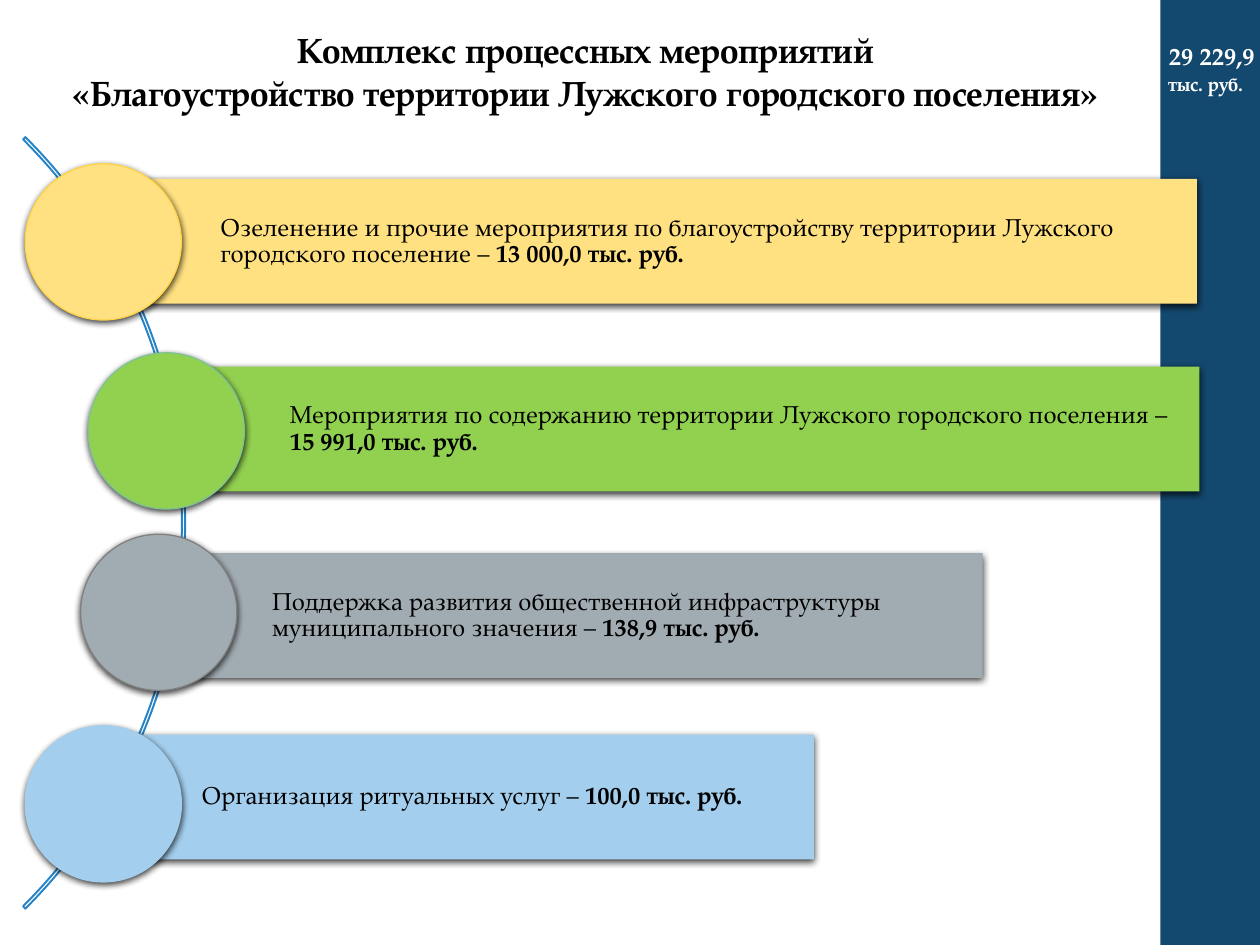
from lxml import etree
from pptx import Presentation
from pptx.dml.color import RGBColor
from pptx.enum.shapes import MSO_SHAPE as Shape
from pptx.enum.text import MSO_ANCHOR as Anchor, PP_ALIGN as Align
from pptx.oxml.ns import qn
from pptx.util import Inches, Pt

FONT = "TeX Gyre Pagella"
BLACK = RGBColor(0x00, 0x00, 0x00)
WHITE = RGBColor(0xFF, 0xFF, 0xFF)
NAVY = RGBColor(0x14, 0x49, 0x6F)
ARC_BLUE = RGBColor(0x26, 0x83, 0xC6)
YELLOW = RGBColor(0xFF, 0xE1, 0x81)
GOLD = RGBColor(0xFF, 0xD4, 0x4B)
GREEN = RGBColor(0x92, 0xD0, 0x50)
TEAL = RGBColor(0x7E, 0xC4, 0x92)
SILVER = RGBColor(0xA1, 0xAC, 0xB2)
GRAY = RGBColor(0x80, 0x80, 0x80)
SKY = RGBColor(0xA3, 0xCE, 0xED)

WIDTH, HEIGHT = 10, 7.5
SIDEBAR_LEFT = 9.21
BAR_HEIGHT = 0.99
CIRCLE_SIZE = 1.24
ARC_SIZE = 8.66

TITLE = ["Комплекс процессных мероприятий",
         "«Благоустройство территории Лужского городского поселения»"]
TOTAL = [[(" 29 229,9", 14)], [(" ", 12), ("тыс. руб.", 11)]]
# name, amount, fill, circle line, bar (left, top, width), circle (left, top)
MEASURES = [
    ("Озеленение и прочие мероприятия по благоустройству территории Лужского "
     "городского поселение – ", "13 000,0 тыс. руб.",
     YELLOW, GOLD, (0.96, 1.42, 8.54), (0.2, 1.3)),
    ("Мероприятия по содержанию территории Лужского городского поселения – ",
     "15 991,0 тыс. руб.", GREEN, TEAL, (1.51, 2.91, 8.01), (0.7, 2.8)),
    ("Поддержка развития общественной инфраструктуры муниципального значения – ",
     "138,9 тыс. руб.", SILVER, GRAY, (1.37, 4.39, 6.43), (0.64, 4.24)),
    ("Организация ритуальных услуг – ", "100,0 тыс. руб.",
     SKY, SKY, (0.81, 5.83, 5.65), (0.2, 5.76)),
]


def add_run(paragraph, text, size, color=BLACK, bold=False):
    run = paragraph.add_run()
    run.text = text
    font = run.font
    font.name, font.size, font.bold = FONT, Pt(size), bold
    font.color.rgb = color


def add_paragraph(frame, index):
    return frame.add_paragraph() if index else frame.paragraphs[0]


def add_shape(slide, kind, left, top, width, height, fill=None, line=None, points=0.75):
    shape = slide.shapes.add_shape(
        kind, Inches(left), Inches(top), Inches(width), Inches(height))
    shape.shadow.inherit = False
    if fill is None:
        shape.fill.background()
    else:
        shape.fill.solid()
        shape.fill.fore_color.rgb = fill
    if line is None:
        shape.line.fill.background()
    else:
        shape.line.color.rgb = line
        shape.line.width = Pt(points)
    return shape


def add_shadow(shape):
    effects = shape.element.spPr.find(qn("a:effectLst"))
    shadow = etree.SubElement(effects, qn("a:outerShdw"), blurRad=str(Pt(4)),
                              dist=str(Pt(1.2)), dir="5400000", rotWithShape="0")
    color = etree.SubElement(shadow, qn("a:srgbClr"), val="000000")
    etree.SubElement(color, qn("a:alpha"), val="75000")


def add_measure(slide, name, amount, fill, line, bar_place, circle_place):
    bar = add_shape(slide, Shape.RECTANGLE, *bar_place, BAR_HEIGHT, fill)
    add_shadow(bar)
    frame = bar.text_frame
    frame.word_wrap = True
    frame.vertical_anchor = Anchor.MIDDLE
    frame.margin_left = Inches(0.79)
    frame.margin_top = frame.margin_right = frame.margin_bottom = Inches(0.04)
    paragraph = frame.paragraphs[0]
    paragraph.alignment = Align.LEFT
    paragraph.line_spacing = 0.9
    add_run(paragraph, name, 14)
    add_run(paragraph, amount, 14, bold=True)
    circle = add_shape(slide, Shape.OVAL, *circle_place, CIRCLE_SIZE, CIRCLE_SIZE, fill, line)
    add_shadow(circle)


def main():
    presentation = Presentation()
    presentation.slide_width, presentation.slide_height = Inches(WIDTH), Inches(HEIGHT)
    slide = presentation.slides.add_slide(presentation.slide_layouts[5])

    # Sidebar
    add_shape(slide, Shape.RECTANGLE, SIDEBAR_LEFT, 0, WIDTH - SIDEBAR_LEFT, HEIGHT, NAVY)

    # Title
    title = slide.shapes.title
    title.left, title.top = Inches(-0.04), Inches(0.18)
    title.width, title.height = Inches(9.37), Inches(0.77)
    title.text_frame.vertical_anchor = Anchor.TOP
    for index, text in enumerate(TITLE):
        paragraph = add_paragraph(title.text_frame, index)
        paragraph.alignment = Align.CENTER
        add_run(paragraph, text, 20, bold=True)

    # Arc behind the measures
    arc = add_shape(slide, Shape.BLOCK_ARC, -7.19, -0.18, ARC_SIZE, ARC_SIZE,
                    line=ARC_BLUE, points=1.1)
    for index, value in enumerate((189, 27, 0.003)):
        arc.adjustments[index] = value

    # Measures
    for measure in MEASURES:
        add_measure(slide, *measure)

    # Total in the sidebar
    total = slide.shapes.add_textbox(Inches(9.13), Inches(0.28), Inches(1.02), Inches(0.54))
    total.text_frame.word_wrap = True
    for index, runs in enumerate(TOTAL):
        paragraph = add_paragraph(total.text_frame, index)
        for text, size in runs:
            add_run(paragraph, text, size, WHITE, bold=True)

    presentation.save("out.pptx")


if __name__ == "__main__":
    main()
